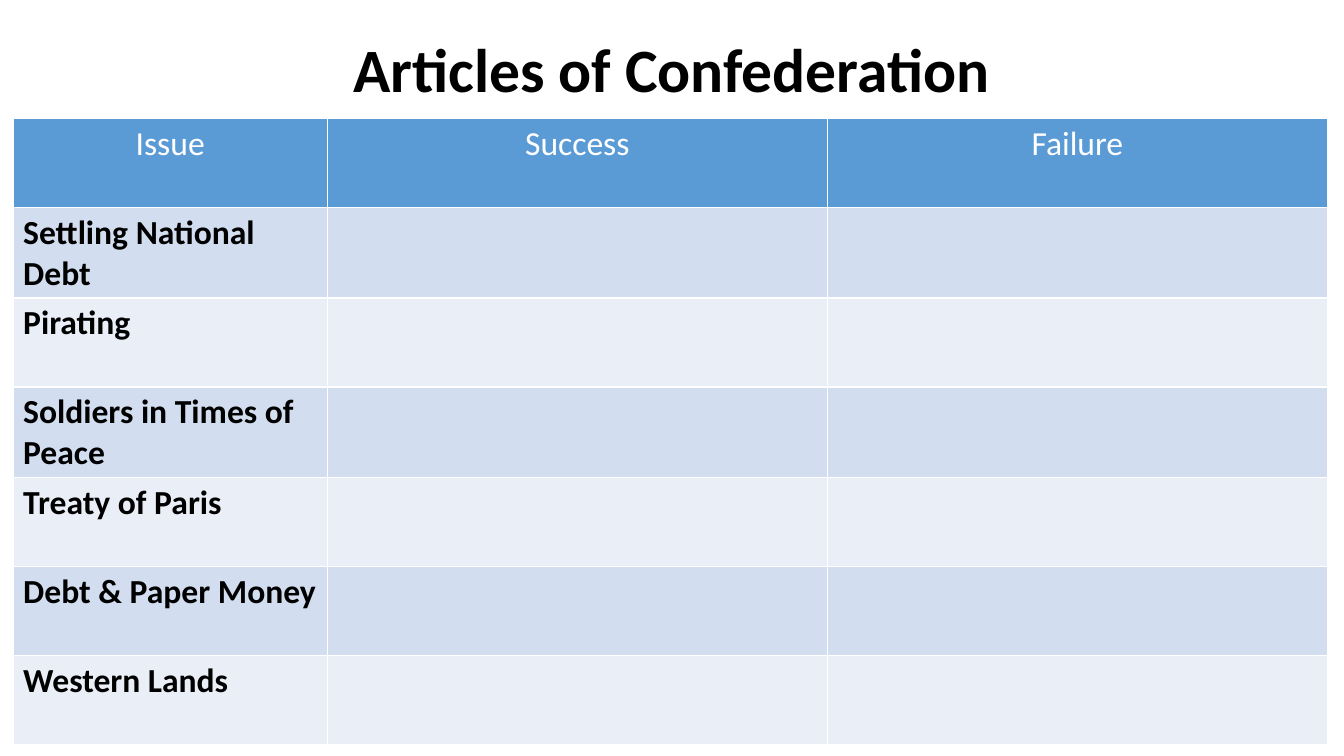
from dataclasses import dataclass

from pptx import Presentation
from pptx.dml.color import RGBColor
from pptx.enum.text import MSO_ANCHOR, PP_ALIGN
from pptx.util import Cm, Pt


@dataclass(frozen=True)
class Theme:
    font: str = "Calibri"
    title_size: int = 44
    table_size: int = 24
    text: str = "000000"
    header_text: str = "FFFFFF"
    header_fill: str = "5B9BD5"
    band_fills: tuple = ("D2DEEF", "EAEFF7")


THEME = Theme()
HEADINGS = ("Issue", "Success", "Failure")
ISSUES = (
    "Settling National Debt",
    "Pirating",
    "Soldiers in Times of Peace",
    "Treaty of Paris",
    "Debt & Paper Money",
    "Western Lands",
)


def style_paragraph(paragraph, size, color, bold, alignment):
    paragraph.alignment = alignment
    font = paragraph.font
    font.name = THEME.font
    font.size = Pt(size)
    font.bold = bold
    font.color.rgb = RGBColor.from_string(color)


def add_title(slide, text, left, top, width, height):
    frame = slide.shapes.add_textbox(left, top, width, height).text_frame
    frame.word_wrap = True
    frame.vertical_anchor = MSO_ANCHOR.MIDDLE
    paragraph = frame.paragraphs[0]
    paragraph.text = text
    paragraph.line_spacing = 0.9
    style_paragraph(paragraph, THEME.title_size, THEME.text, True, PP_ALIGN.CENTER)


def fill_cell(cell, text, fill, color, bold, alignment):
    cell.fill.solid()
    cell.fill.fore_color.rgb = RGBColor.from_string(fill)
    paragraph = cell.text_frame.paragraphs[0]
    paragraph.text = text
    style_paragraph(paragraph, THEME.table_size, color, bold, alignment)


def add_issue_table(slide, left, top, width, height):
    table = slide.shapes.add_table(
        len(ISSUES) + 1, len(HEADINGS), left, top, width, height
    ).table

    # The issue column is narrower; the answer columns share the rest
    issue_width = Cm(7.92)
    table.columns[0].width = issue_width
    for column in range(1, len(HEADINGS)):
        table.columns[column].width = (width - issue_width) // (len(HEADINGS) - 1)

    # Header row
    for column, heading in enumerate(HEADINGS):
        fill_cell(table.cell(0, column), heading, THEME.header_fill,
                  THEME.header_text, False, PP_ALIGN.CENTER)

    # Banded rows with empty answer cells
    for row, issue in enumerate(ISSUES, start=1):
        fill = THEME.band_fills[(row - 1) % len(THEME.band_fills)]
        for column in range(len(HEADINGS)):
            fill_cell(table.cell(row, column), issue if column == 0 else "",
                      fill, THEME.text, True, PP_ALIGN.LEFT)


def main():
    presentation = Presentation()
    presentation.slide_width = Cm(33.87)
    presentation.slide_height = Cm(19.05)
    slide = presentation.slides.add_slide(presentation.slide_layouts[6])
    add_title(slide, "Articles of Confederation", Cm(2.33), Cm(0), Cm(29.21), Cm(3.68))
    add_issue_table(slide, Cm(0.33), Cm(2.98), Cm(33.12), Cm(15.7))
    presentation.save("out.pptx")


if __name__ == "__main__":
    main()
